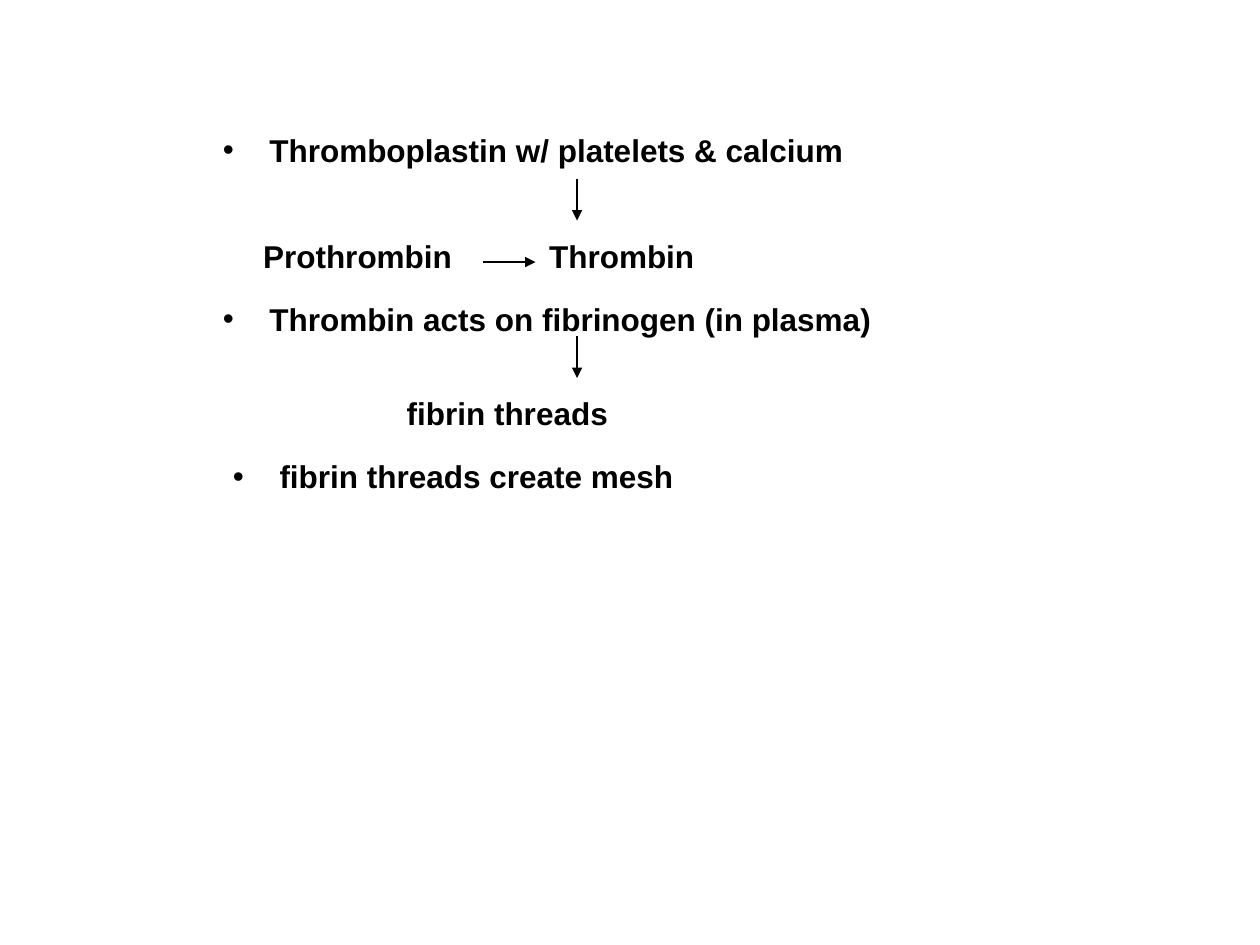
from lxml import etree
from pptx import Presentation, util as u
from pptx.dml.color import RGBColor
from pptx.enum import shapes, text
from pptx.oxml import ns

INK = "000000"


def color(value):
    return RGBColor.from_string(value)


def add_child(parent, tag, **values):
    child = etree.SubElement(parent, ns.qn(tag))
    for name, value in values.items():
        child.set(name, str(value))


deck = Presentation()
deck.slide_width, deck.slide_height = u.Inches(10), u.Inches(7.5)
page = deck.slides.add_slide(deck.slide_layouts[6])

# Clotting steps: left, top, width, bullet, indent, wording
steps = [
    (1.67, 0.99, 8.33, True, 0.37, "Thromboplastin w/ platelets & calcium"),
    (1.99, 1.83, 2.27, False, 0, "Prothrombin"),
    (4.26, 1.83, 4.82, False, 0, "Thrombin"),
    (1.67, 2.33, 8.33, True, 0.37, "Thrombin acts on fibrinogen (in plasma)"),
    (0.5, 3.08, 9.5, False, 2.63, "fibrin threads"),
    (1.75, 3.58, 8.25, True, 0.37, "fibrin threads create mesh"),
]
font_format = {"name": "Arial", "size": u.Pt(18), "bold": True}
for left, top, width, bullet, indent, words in steps:
    box = page.shapes.add_textbox(*map(u.Inches, (left, top, width, 0.5)))
    box.text_frame.word_wrap = True
    box.text_frame.auto_size = text.MSO_AUTO_SIZE.SHAPE_TO_FIT_TEXT
    para = box.text_frame.paragraphs[0]
    span = para.add_run()
    span.text = words
    for name, value in font_format.items():
        setattr(span.font, name, value)
    span.font.color.rgb = color(INK)

    # Indent and bullet
    layout = para._p.get_or_add_pPr()
    layout.set("marL", str(u.Inches(indent)))
    layout.set("indent", str(u.Inches(-indent if bullet else 0)))
    if bullet:
        add_child(layout, "a:buFont", typeface="Arial")
        add_child(layout, "a:buChar", char="•")

# Arrows between the steps
arrows = [
    (4.58, 1.42, 4.58, 1.75),
    (3.83, 2.08, 4.25, 2.08),
    (4.58, 2.67, 4.58, 3),
]
for ends in arrows:
    arrow = page.shapes.add_connector(
        shapes.MSO_CONNECTOR.STRAIGHT, *map(u.Inches, ends))
    arrow.line.color.rgb = color(INK)
    arrow.line.width = u.Pt(0.75)
    add_child(arrow.line._get_or_add_ln(), "a:tailEnd", type="triangle")
    add_child(arrow._element.spPr, "a:effectLst")

deck.save("out.pptx")
